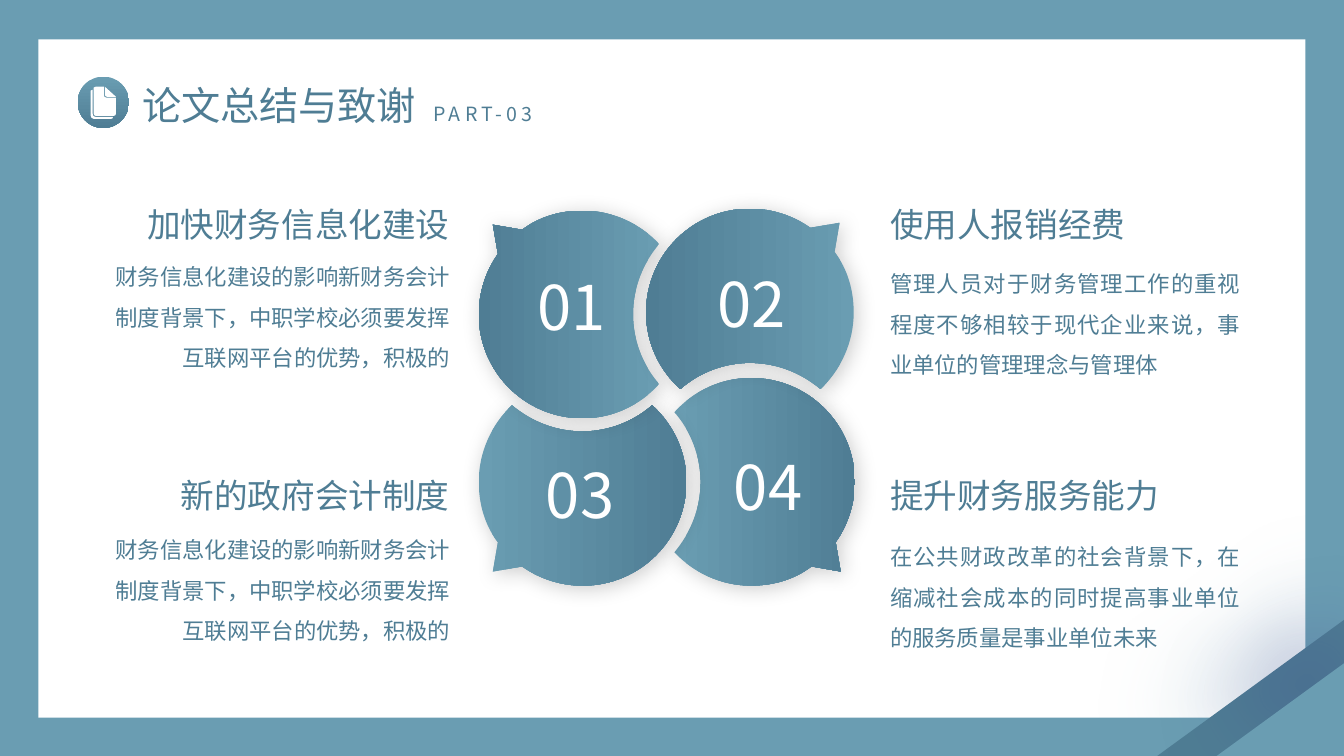
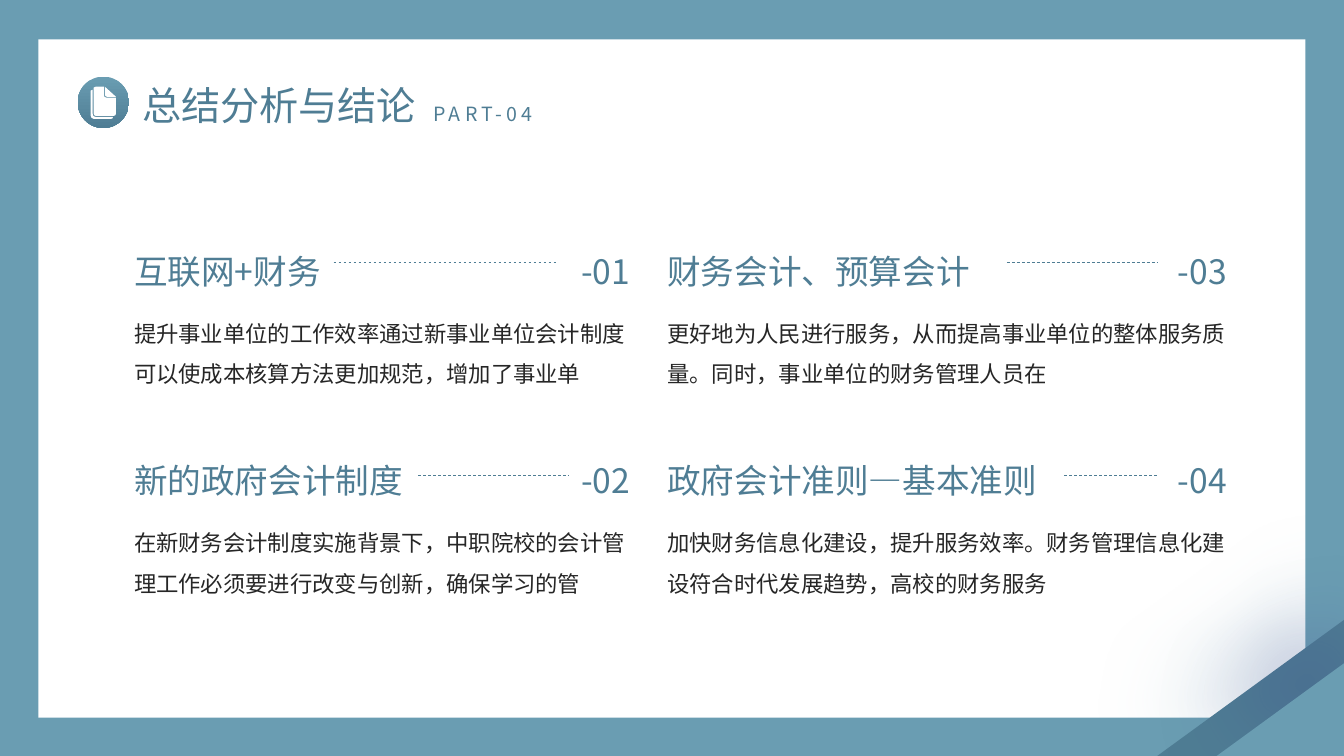
"""Builds two summary slides of a finance thesis: a four-petal diagram and a four-part conclusion."""
from lxml import etree
from pptx import Presentation
from pptx import util as u
from pptx.dml.color import RGBColor
from pptx.enum import dml, shapes, text
from pptx.oxml.ns import qn

WIDTH, HEIGHT = 40 / 3, 7.5
FONT = "Noto Sans CJK SC"
LIGHT, DARK, WHITE, INK = "6A9DB2", "4F7D94", "FFFFFF", "262626"
LEFT, RIGHT = text.PP_ALIGN.LEFT, text.PP_ALIGN.RIGHT
CENTER, JUSTIFY = text.PP_ALIGN.CENTER, text.PP_ALIGN.JUSTIFY

# each contour is a start and its segments: (x, y) is a line, six numbers are a curve
ICON = [
    [(1.13, 1.15), (0.95, 1.15), (0.94, 1.15, 0.93, 1.14, 0.93, 1.13), (0.93, 0.87),
     (0.93, 0.87, 0.94, 0.86, 0.95, 0.86), (1.03, 0.86), (1.03, 0.94),
     (1.03, 0.96, 1.04, 0.97, 1.06, 0.97), (1.15, 0.97), (1.15, 1.13),
     (1.15, 1.14, 1.14, 1.15, 1.13, 1.15)],
    [(1.06, 0.96), (1.05, 0.96, 1.04, 0.95, 1.04, 0.94), (1.04, 0.86), (1.15, 0.96)],
    [(0.96, 1.16), (1.12, 1.16), (1.12, 1.17, 1.12, 1.18, 1.1, 1.18), (0.93, 1.18),
     (0.91, 1.18, 0.9, 1.16, 0.9, 1.15), (0.9, 0.9), (0.9, 0.9, 0.91, 0.89, 0.92, 0.89),
     (0.92, 1.13), (0.92, 1.15, 0.93, 1.16, 0.95, 1.16)],
]
PETAL = [
    (0, -1.03), (0.3, -1.03, 0.57, -0.9, 0.76, -0.7), (0.6, -0.51, 0.5, -0.27, 0.5, 0),
    (0.5, 0.26, 0.6, 0.51, 0.76, 0.69), (0.57, 0.9, 0.3, 1.03, 0, 1.03),
    (-0.57, 1.03, -1.03, 0.57, -1.03, 0), (-1.03, -0.22, -0.96, -0.43, -0.84, -0.6),
    (-0.89, -0.89), (-0.6, -0.84), (-0.43, -0.97, -0.22, -1.03, 0, -1.03),
]
# number, centre, clockwise quarter turns, gradient angle, number box
PETALS = [
    ("04", (7.45, 4.78), 2, 0, (7.06, 4.45, 1.12, 0.74)),
    ("03", (5.78, 4.78), 3, 0, (5.15, 4.53, 1.21, 0.74)),
    ("01", (5.78, 3.12), 0, 180, (5.09, 2.67, 1.17, 0.74)),
    ("02", (7.44, 3.1), 1, 180, (6.92, 2.64, 1.08, 0.74)),
]
CORNERS = [(11.48, 6.15, DARK, LIGHT), (12.07, 6.58, LIGHT, "2C1C82")]

SUMMARY = "论文总结与致谢", "PART-03"
INFORMATION = "财务信息化建设的影响新财务会计制度背景下，中职学校必须要发挥互联网平台的优势，积极的"
POINTS = [
    ("加快财务信息化建设", INFORMATION, 1.82, 2.48, RIGHT),
    ("新的政府会计制度", INFORMATION, 4.51, 5.19, RIGHT),
    ("使用人报销经费", "管理人员对于财务管理工作的重视程度不够相较于现代企业来说，事业单位的管理理念与管理体",
     1.82, 2.55, JUSTIFY),
    ("提升财务服务能力", "在公共财政改革的社会背景下，在缩减社会成本的同时提高事业单位的服务质量是事业单位未来",
     4.51, 5.26, JUSTIFY),
]

CONCLUSION = "总结分析与结论", "PART-04"
# left edge, heading width, body width, number left edge and width
COLUMNS = [(1.33, 3.08, 5.06, 5.42, 0.83), (6.62, 4.58, 5.71, 10.94, 1.23)]
# top of the heading, the body and the dashed line
ROWS = [(2.29, 3.04, 2.6), (4.36, 5.12, 4.72)]
FINDINGS = [
    ("互联网+财务", "提升事业单位的工作效率通过新事业单位会计制度可以使成本核算方法更加规范，增加了事业单", 3.31, 5.53),
    ("新的政府会计制度", "在新财务会计制度实施背景下，中职院校的会计管理工作必须要进行改变与创新，确保学习的管", 4.15, 5.64),
    ("财务会计、预算会计", "更好地为人民进行服务，从而提高事业单位的整体服务质量。同时，事业单位的财务管理人员在", 9.99, 11.49),
    ("政府会计准则—基本准则", "加快财务信息化建设，提升服务效率。财务管理信息化建设符合时代发展趋势，高校的财务服务", 10.56, 11.49),
]


def rgb(value):
    return RGBColor.from_string(value)


def inches(values):
    return [u.Inches(v) for v in values]


def paint(sp, color=None, angle=None, shadow=None):
    if color:
        sp.fill.solid()
        sp.fill.fore_color.rgb = rgb(color)
    else:
        sp.fill.gradient()
        sp.fill.gradient_angle = angle
        for stop, shade in zip(sp.fill.gradient_stops, (LIGHT, DARK)):
            stop.color.rgb = rgb(shade)
    sp.line.fill.background()
    sp.shadow.inherit = False
    if shadow:
        shade, alpha, blur, dist, turn = shadow
        effects = sp._element.spPr.find(qn("a:effectLst"))
        outer = etree.SubElement(effects, qn("a:outerShdw"), blurRad=str(u.Pt(blur)),
                                 dist=str(u.Pt(dist)), dir=str(turn * 60000),
                                 algn="ctr", rotWithShape="0")
        tone = etree.SubElement(outer, qn("a:srgbClr"), val=shade)
        etree.SubElement(tone, qn("a:alpha"), val=str(alpha * 1000))
    return sp


def bend(sp, segments):
    lines = list(sp._element.iter(qn("a:lnTo")))
    for line, segment in zip(lines, segments):
        if len(segment) == 2:
            continue
        line.tag_name = None
        curve = etree.Element(qn("a:cubicBezTo"))
        points = inches(segment)
        for x, y in zip(points[::2], points[1::2]):
            etree.SubElement(curve, qn("a:pt"), x=str(x - sp.left), y=str(y - sp.top))
        line.getparent().replace(line, curve)


def outline(slide, contours, **look):
    builder = None
    for contour in contours:
        start, *rest = [inches(segment[-2:]) for segment in contour]
        if builder is None:
            builder = slide.shapes.build_freeform(*start)
        else:
            builder.move_to(*start)
        builder.add_line_segments(rest, close=False)
        builder.add_line_segments([], close=True)
    sp = builder.convert_to_shape()
    # closing adds no line, so lines and segments pair up in order
    bend(sp, [segment for contour in contours for segment in contour[1:]])
    return paint(sp, **look)


def write(slide, words, box, size, color=DARK, align=LEFT, spacing=1.5, tracking=0):
    sp = slide.shapes.add_textbox(*inches(box))
    tf = sp.text_frame
    frame = dict(margin_left=0, margin_right=0, margin_top=0, margin_bottom=0, word_wrap=True,
                 auto_size=text.MSO_AUTO_SIZE.SHAPE_TO_FIT_TEXT)
    for name, value in frame.items():
        setattr(tf, name, value)
    p = tf.paragraphs[0]
    p.alignment, p.line_spacing = align, spacing
    r = p.add_run()
    r.text = words
    for name, value in dict(size=u.Pt(size), name=FONT).items():
        setattr(r.font, name, value)
    r.font.color.rgb = rgb(color)
    props = r._r.get_or_add_rPr()
    etree.SubElement(props, qn("a:ea"), typeface=FONT)
    if tracking:
        props.set("spc", str(tracking * 100))
    return sp


def preset(slide, kind, box, **look):
    return paint(slide.shapes.add_shape(kind, *inches(box)), **look)


def dash(slide, x1, x2, y):
    line = slide.shapes.add_connector(shapes.MSO_CONNECTOR.STRAIGHT, *inches((x1, y, x2, y)))
    line.line.color.rgb = rgb(DARK)
    line.line.width = u.Pt(0.5)
    line.line.dash_style = dml.MSO_LINE.DASH
    etree.SubElement(line._element.spPr, qn("a:effectLst"))


def start_slide(prs):
    slide = prs.slides.add_slide(prs.slide_layouts[6])
    slide.background.fill.solid()
    slide.background.fill.fore_color.rgb = rgb(LIGHT)
    preset(slide, shapes.MSO_SHAPE.RECTANGLE, (0.38, 0.39, 12.57, 6.73), color=WHITE)
    return slide


def add_header(slide, title, part):
    slide.shapes.add_group_shape([
        write(slide, title, (1.41, 0.81, 2.83, 0.47), 28, spacing=1),
        preset(slide, shapes.MSO_SHAPE.OVAL, (0.77, 0.76, 0.51, 0.51), angle=270),
        outline(slide, ICON, color=WHITE),
        write(slide, part, (4.3, 1.01, 1.11, 0.24), 14, spacing=1, tracking=3),
    ])


def add_corner(slide):
    slide.shapes.add_group_shape([
        outline(slide, [[(WIDTH, y), (WIDTH, HEIGHT), (x, HEIGHT)]],
                color=color, shadow=(glow, 28, 66, 31, 270))
        for x, y, color, glow in CORNERS
    ])


def place(segment, center, turns):
    moved = []
    for x, y in zip(segment[::2], segment[1::2]):
        for _ in range(turns):
            x, y = -y, x
        moved += [center[0] + x, center[1] + y]
    return moved


def add_summary(prs):
    slide = start_slide(prs)
    add_header(slide, *SUMMARY)
    for heading, body, top, body_top, align in POINTS:
        x, body_x, width = (1.45, 1.03, 3.44) if align == RIGHT else (8.83, 8.83, 3.48)
        write(slide, heading, (x, top, 3.01, 0.53), 24, align=align)
        write(slide, body, (body_x, body_top, width, 1.16), 16, align=align)
    add_corner(slide)
    for _, center, turns, angle, _ in PETALS:
        outline(slide, [[place(segment, center, turns) for segment in PETAL]],
                angle=angle, shadow=("000000", 20, 15, 3, 45))
    for number, *_, box in sorted(PETALS):
        write(slide, number, box, 44, WHITE, CENTER, 1)


def add_conclusion(prs):
    slide = start_slide(prs)
    for i, (heading, body, x1, x2) in enumerate(FINDINGS):
        x, heading_width, width, number_x, number_width = COLUMNS[i // 2]
        top, body_top, line_y = ROWS[i % 2]
        write(slide, heading, (x, top, heading_width, 0.53), 24)
        write(slide, body, (x, body_top, width, 0.76), 16, INK)
        write(slide, f"-{i + 1:02}", (number_x, top, number_width, 0.53), 24, align=RIGHT)
        dash(slide, x1, x2, line_y)
    add_header(slide, *CONCLUSION)
    add_corner(slide)


def main():
    prs = Presentation()
    prs.slide_width, prs.slide_height = inches((WIDTH, HEIGHT))
    add_summary(prs)
    add_conclusion(prs)
    prs.save("out.pptx")


if __name__ == "__main__":
    main()
